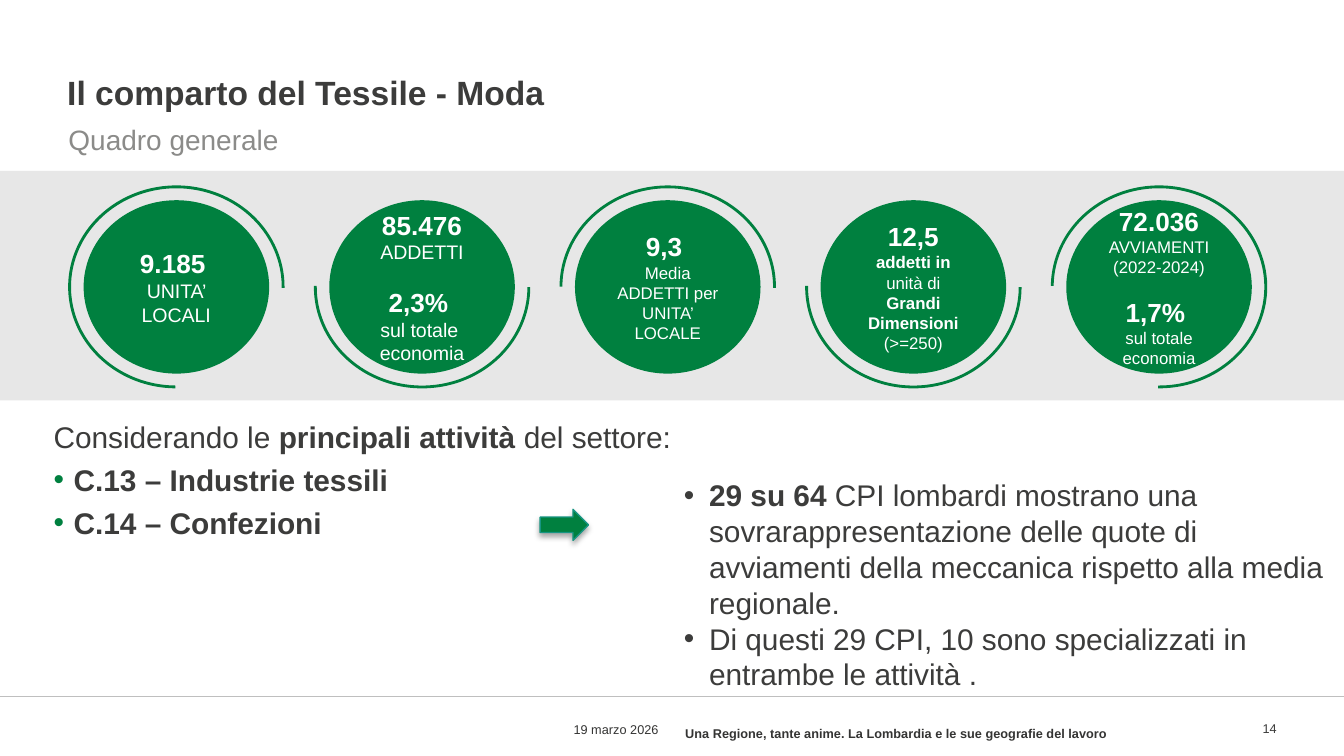
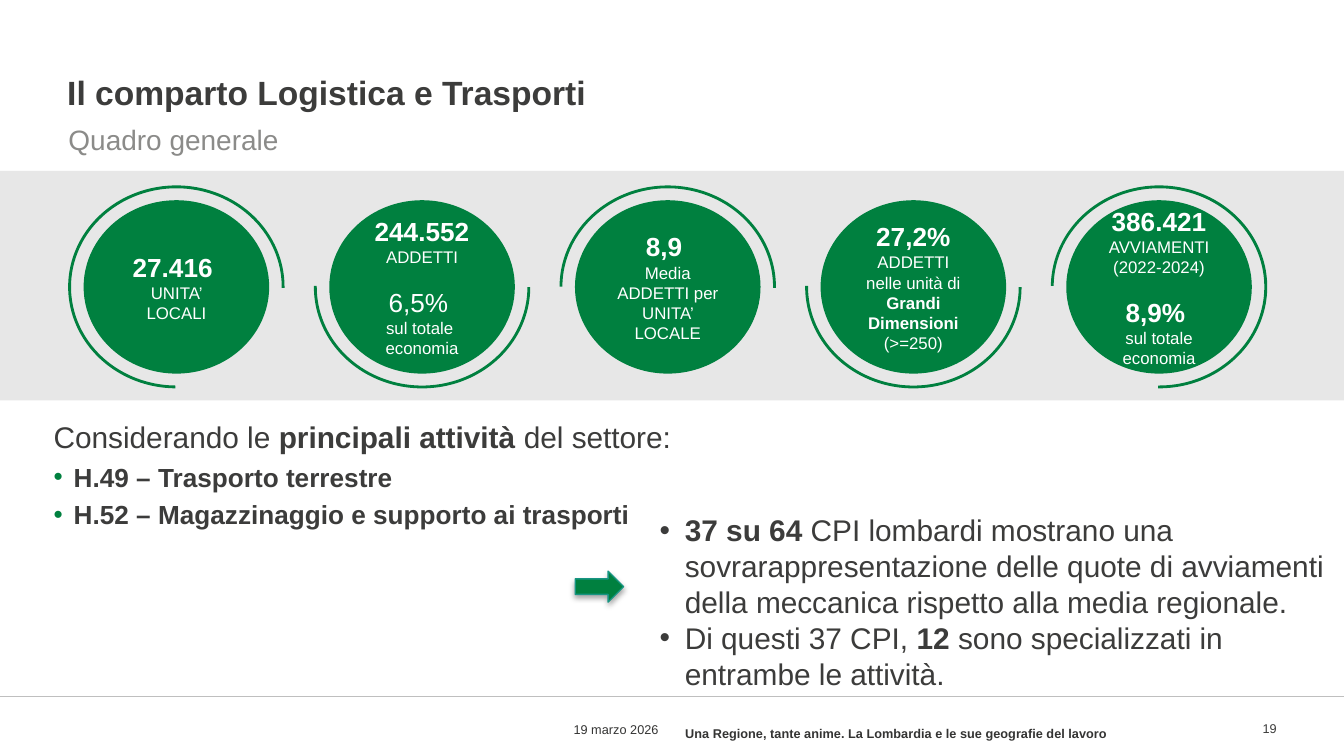
from dataclasses import dataclass

from lxml import etree
from pptx import Presentation
from pptx.dml.color import RGBColor
from pptx.enum.shapes import MSO_CONNECTOR, MSO_SHAPE
from pptx.enum.text import MSO_ANCHOR, MSO_AUTO_SIZE, PP_ALIGN
from pptx.oxml.ns import qn
from pptx.util import Pt

# Shared look
GREEN = RGBColor(0x00, 0x80, 0x3F)
TEAL = RGBColor(0x17, 0x95, 0x82)
BAND_GREY = RGBColor(0xE7, 0xE7, 0xE7)
RULE_GREY = RGBColor(0xBF, 0xBF, 0xBF)
SUBTITLE_GREY = RGBColor(0x8B, 0x8B, 0x89)
FOOTER_GREY = RGBColor(0x34, 0x34, 0x33)
INK = RGBColor(0x3C, 0x3C, 0x3B)
WHITE = RGBColor(0xFF, 0xFF, 0xFF)
FONT = "Arial"
HEADLINE = 14
LINE_HEIGHT = 1.15
FOOTER_SIZE = 6.8
SLIDE_WIDTH, SLIDE_HEIGHT = 720, 405
BAND = (0, 91.5, SLIDE_WIDTH, 123)
ACTIVITIES_BOX = (21.6, 221, 675.4, 154)
HEADING_INSETS = (0, 3.6, 7.2, 3.6)

# Circles: ring rotation and arc end angles
DISC = (99.4, 92.9)
RING = (115.9, 108.7)
FIRST_CENTRE, CENTRE_STEP = 94.5, 131.6
HALF, THREE_QUARTERS = 108.088, 54.336
RINGS = [(0, THREE_QUARTERS), (180, HALF), (0, HALF), (180, HALF), (90, THREE_QUARTERS)]


@dataclass
class Line:
    """One paragraph; **marks** switch bold, lead opens it at headline size."""
    text: str
    size: float
    before: float = 0
    lead: str = ""


@dataclass
class Sector:
    title: str
    number: str
    circles: list
    activities: list
    activity_size: float
    arrow: tuple
    findings_box: tuple
    findings: list


def headline(text, before=0):
    return Line(f"**{text}**", HEADLINE, before)


def write(paragraph, line, colour, alignment=PP_ALIGN.LEFT):
    paragraph.alignment = alignment
    if line.before:
        paragraph.space_before = Pt(line.before)
    paragraph.font.name = FONT
    paragraph.font.color.rgb = colour
    paragraph.font.size = Pt(line.size)
    if line.lead:
        run = paragraph.add_run()
        run.text = line.lead
        run.font.size = Pt(HEADLINE)
        run.font.bold = True
    pieces = [(text, index % 2 == 1)
              for index, text in enumerate(line.text.split("**")) if text]
    uniform = not line.lead and len(pieces) == 1
    for text, bold in pieces:
        run = paragraph.add_run()
        run.text = text
        (paragraph if uniform else run).font.bold = bold


def write_all(frame, lines, colour, alignment=PP_ALIGN.LEFT):
    for index, line in enumerate(lines):
        paragraph = frame.paragraphs[0] if index == 0 else frame.add_paragraph()
        write(paragraph, line, colour, alignment)


def add_bullet(paragraph, indent, colour):
    properties = paragraph._p.get_or_add_pPr()
    properties.set("marL", str(Pt(indent)))
    properties.set("indent", str(-Pt(indent)))
    bullet_colour = etree.SubElement(properties, qn("a:buClr"))
    etree.SubElement(bullet_colour, qn("a:srgbClr"), val=str(colour))
    etree.SubElement(properties, qn("a:buFont"), typeface=FONT)
    etree.SubElement(properties, qn("a:buChar"), char="•")


def set_frame(frame, insets, anchor):
    frame.word_wrap = True
    frame.auto_size = MSO_AUTO_SIZE.NONE
    frame.vertical_anchor = anchor
    left, top, right, bottom = insets
    frame.margin_left, frame.margin_top = Pt(left), Pt(top)
    frame.margin_right, frame.margin_bottom = Pt(right), Pt(bottom)


def add_text(slide, box, insets=(7.2, 3.6, 7.2, 3.6), anchor=MSO_ANCHOR.TOP):
    frame = slide.shapes.add_textbox(*map(Pt, box)).text_frame
    set_frame(frame, insets, anchor)
    return frame


def add_filled(shapes, kind, box, fill):
    shape = shapes.add_shape(kind, *map(Pt, box))
    shape.shadow.inherit = False
    shape.fill.solid()
    shape.fill.fore_color.rgb = fill
    shape.line.fill.background()
    return shape


def centred(centre_x, centre_y, size):
    width, height = size
    return centre_x - width / 2, centre_y - height / 2, width, height


def add_heading(slide, title):
    # Title placeholder
    placeholder = slide.shapes.title
    placeholder.left, placeholder.top = Pt(36), Pt(0)
    placeholder.width, placeholder.height = Pt(648), Pt(64)
    set_frame(placeholder.text_frame, HEADING_INSETS, MSO_ANCHOR.BOTTOM)
    write(placeholder.text_frame.paragraphs[0], Line(f"**{title}**", 18), INK)
    # Subtitle
    frame = add_text(slide, (36.7, 60.5, 384.5, 31.7), HEADING_INSETS)
    frame.paragraphs[0].line_spacing = 1.1
    write(frame.paragraphs[0], Line("Quadro generale", 15), SUBTITLE_GREY)


def add_footer(slide, number):
    rule = slide.shapes.add_connector(
        MSO_CONNECTOR.STRAIGHT, Pt(0), Pt(373), Pt(SLIDE_WIDTH), Pt(373))
    rule.line.color.rgb = RULE_GREY
    rule.line.width = Pt(0.25)
    etree.SubElement(rule._element.spPr, qn("a:effectLst"))
    footer_parts = [
        ((192.2, 380.2, 167.8, 21.6), HEADING_INSETS, "19 marzo 2026",
         FOOTER_GREY, PP_ALIGN.RIGHT),
        ((360, 381.6, 273.6, 22.3), (7.2, 3.6, 7.2, 3.6),
         "**Una Regione, tante anime. La Lombardia e le sue geografie del lavoro**",
         FOOTER_GREY, PP_ALIGN.LEFT),
        ((654.5, 381, 29.5, 21.6), (7.2, 0, 0, 3.6), number, INK, PP_ALIGN.RIGHT),
    ]
    for box, insets, text, colour, alignment in footer_parts:
        frame = add_text(slide, box, insets, MSO_ANCHOR.MIDDLE)
        write(frame.paragraphs[0], Line(text, FOOTER_SIZE), colour, alignment)


def add_circle(slide, centre_x, centre_y, lines, rotation, arc_start):
    group = slide.shapes.add_group_shape()
    disc = add_filled(group.shapes, MSO_SHAPE.OVAL,
                      centred(centre_x, centre_y, DISC), GREEN)
    set_frame(disc.text_frame, (7.2, 3.6, 7.2, 3.6), MSO_ANCHOR.MIDDLE)
    write_all(disc.text_frame, lines, WHITE, PP_ALIGN.CENTER)
    ring_size = RING[::-1] if rotation == 90 else RING
    ring = add_filled(group.shapes, MSO_SHAPE.BLOCK_ARC,
                      centred(centre_x, centre_y, ring_size), GREEN)
    ring.rotation = rotation
    for index, value in enumerate((arc_start, 0.324, 0.014)):
        ring.adjustments[index] = value


def add_key_figures(slide, box, circles):
    left, top, width, height = box
    add_filled(slide.shapes, MSO_SHAPE.RECTANGLE, box, BAND_GREY)
    for index, (lines, ring) in enumerate(zip(circles, RINGS)):
        centre_x = left + FIRST_CENTRE + index * CENTRE_STEP
        add_circle(slide, centre_x, top + height / 2 + 0.7, lines, *ring)


def add_activities(slide, box, activities, size):
    frame = add_text(slide, box)
    write(frame.paragraphs[0],
          Line("Considerando le **principali attività** del settore:", 16), INK)
    for activity in activities:
        paragraph = frame.add_paragraph()
        add_bullet(paragraph, 10.8, GREEN)
        write(paragraph, Line(f"**{activity}**", size, 0.23 * size), INK)


def add_arrow(slide, position):
    arrow = add_filled(slide.shapes, MSO_SHAPE.RIGHT_ARROW, (*position, 25.9, 16.6), GREEN)
    arrow.line.color.rgb = TEAL
    arrow.line.width = Pt(0.75)
    # Soft shadow straight below
    effects = arrow._element.spPr.find(qn("a:effectLst"))
    shadow = etree.SubElement(effects, qn("a:outerShdw"), blurRad=str(Pt(3.1)),
                              dist=str(Pt(1.8)), dir="5400000", rotWithShape="0")
    colour = etree.SubElement(shadow, qn("a:srgbClr"), val="000000")
    etree.SubElement(colour, qn("a:alpha"), val="35000")


def add_findings(slide, box, findings):
    frame = add_text(slide, box)
    frame.auto_size = MSO_AUTO_SIZE.SHAPE_TO_FIT_TEXT
    for index, finding in enumerate(findings):
        paragraph = frame.paragraphs[0] if index == 0 else frame.add_paragraph()
        add_bullet(paragraph, 13.5, INK)
        write(paragraph, Line(finding, 16), INK)


def add_sector_slide(presentation, sector):
    slide = presentation.slides.add_slide(presentation.slide_layouts[5])
    add_heading(slide, sector.title)
    add_key_figures(slide, BAND, sector.circles)
    add_activities(slide, ACTIVITIES_BOX, sector.activities, sector.activity_size)
    add_arrow(slide, sector.arrow)
    add_findings(slide, sector.findings_box, sector.findings)
    add_footer(slide, sector.number)


# Circle contents
def units(count, size):
    return [headline(count), Line("UNITA’ LOCALI", size)]


def employees(count, share, size):
    return [headline(count), Line("ADDETTI", size),
            Line(share, HEADLINE, LINE_HEIGHT * size),
            Line("sul totale ", size), Line("economia", size)]


def average(value):
    return [headline(value), Line("Media ADDETTI per UNITA’ LOCALE", 9)]


def hires(count, share):
    return [headline(count), Line("AVVIAMENTI", 9), Line("(2022-2024)", 9),
            headline(share, LINE_HEIGHT * 9), Line("sul totale economia", 9)]


def overrepresented(count):
    return (f"**{count} su 64 **CPI lombardi mostrano una sovrarappresentazione delle "
            "quote di avviamenti della meccanica rispetto alla media regionale.")


LARGE_UNITS = Line("(>=250)", 9)

SECTORS = [
    Sector(
        title="Il comparto del Tessile - Moda",
        number="14",
        circles=[
            units("9.185 ", 10.5),
            employees("85.476", "**2,3% **", 10.5),
            average("9,3 "),
            [Line("**addetti in **unità di **Grandi Dimensioni**", 9, lead="12,5 "),
             LARGE_UNITS],
            hires("72.036", "1,7% "),
        ],
        activities=["C.13 – Industrie tessili", "C.14 – Confezioni"],
        activity_size=16,
        arrow=(289.4, 272.9),
        findings_box=(359.3, 252, 359.3, 123.8),
        findings=[overrepresented(29),
                  "Di questi 29 CPI, 10 sono specializzati in entrambe le attività ."],
    ),
    Sector(
        title="Il comparto Logistica e Trasporti",
        number="19",
        circles=[
            units("27.416 ", 9),
            employees("244.552", "6,5% ", 9),
            average("8,9 "),
            [headline("27,2%"), Line("ADDETTI nelle unità di **Grandi Dimensioni**", 9),
             LARGE_UNITS],
            hires("386.421", "8,9% "),
        ],
        activities=["H.49 – Trasporto terrestre",
                    "H.52 – Magazzinaggio e supporto ai trasporti"],
        activity_size=14,
        arrow=(308.2, 306),
        findings_box=(346.3, 270.7, 373.7, 104.4),
        findings=[overrepresented(37),
                  "Di questi 37 CPI, **12 **sono specializzati in entrambe le attività."],
    ),
]


def main():
    presentation = Presentation()
    presentation.slide_width, presentation.slide_height = Pt(SLIDE_WIDTH), Pt(SLIDE_HEIGHT)
    for sector in SECTORS:
        add_sector_slide(presentation, sector)
    presentation.save("out.pptx")


if __name__ == "__main__":
    main()
